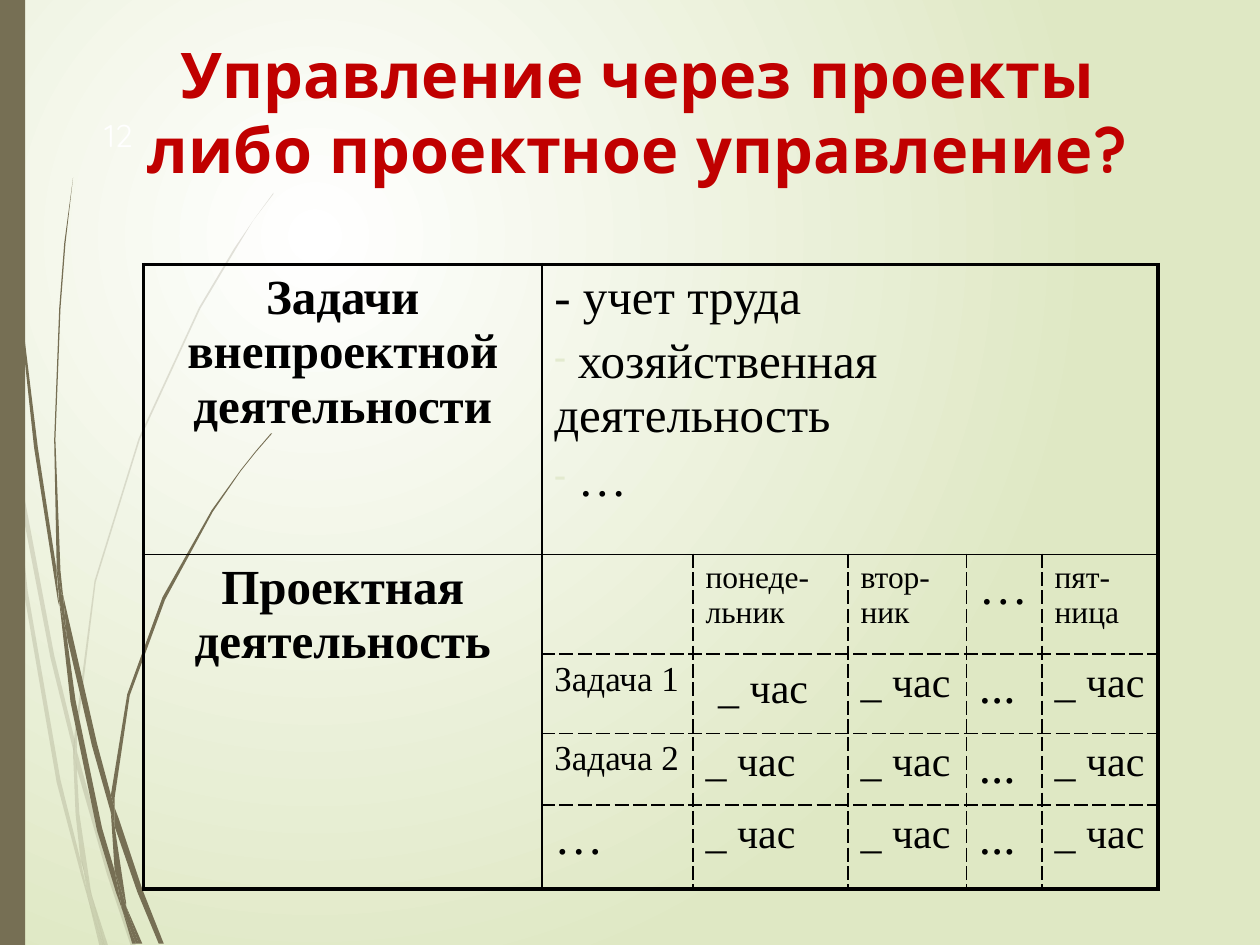
from lxml import etree
from pptx import Presentation
from pptx.dml.color import RGBColor
from pptx.enum.shapes import MSO_SHAPE
from pptx.enum.text import PP_ALIGN
from pptx.oxml import parse_xml
from pptx.oxml.ns import nsdecls, qn
from pptx.util import Inches, Pt

LEFT, CENTER = PP_ALIGN.LEFT, PP_ALIGN.CENTER
RECTANGLE = MSO_SHAPE.RECTANGLE
RED = RGBColor(0xC0, 0x00, 0x00)
BROWN = RGBColor(0x76, 0x6F, 0x54)
BLACK = RGBColor(0x00, 0x00, 0x00)
WHITE = RGBColor(0xFF, 0xFF, 0xFF)
PALE_GREEN = RGBColor(0xDF, 0xE8, 0xC4)
BULLET_GREEN = RGBColor(0xE3, 0xEA, 0xCF)
TITLE_FONT, TABLE_FONT = "Quicksand", "Times New Roman"

# Grass blades: outline points in inches
FAINT_BLADES = [
    [(.08, 3.5), (.06, 3.22), (0, 2.82), (0, 2.99), (.07, 3.44)],
    [(.4, 5.22), (.59, 5.99), (.59, 5.86), (.43, 5.2), (.1, 3.45), (.12, 3.76)],
    [(.64, 6.07), (.61, 5.96), (.61, 6.1), (.85, 6.94), (1.04, 7.51), (1.08, 7.51), (.88, 6.92)],
    [(.83, 7.51), (.86, 7.51), (.73, 7.11)],
    [(.64, 6.83), (.48, 6.19), (.22, 4.69), (.12, 3.76), (.08, 3.5), (.19, 4.7), (.45, 6.21),
     (.64, 6.93), (.7, 7.14), (.69, 7.07)],
    [(.58, 5.99), (.6, 6.46), (.64, 6.83), (.67, 6.92), (.73, 7.11), (.72, 7.06), (.63, 6.46),
     (.61, 6.1), (.61, 6.08)],
    [(.61, 5.84), (.76, 4.62), (1.11, 3.49), (1.59, 2.45), (1.87, 1.98), (2.01, 1.75),
     (2.17, 1.54), (2.17, 1.53), (2.01, 1.75), (1.86, 1.97), (1.58, 2.44), (1.1, 3.48),
     (.75, 4.61), (.59, 5.84), (.59, 5.86), (.61, 5.96)],
    [(.7, 7.14), (.79, 7.51), (.82, 7.51)],
    [(.61, 6.08), (.61, 6.1), (.61, 5.96), (.59, 5.86), (.58, 5.99)],
    [(.67, 6.92), (.65, 6.83), (.69, 7.07), (.7, 7.14), (.82, 7.51), (.83, 7.51), (.73, 7.11)],
]
SOLID_BLADES = [
    [(.05, 1.1), (.14, 2.33), (.27, 3.55), (.46, 4.77), (.47, 4.81), (.45, 4.57), (.45, 4.53),
     (.3, 3.55), (.15, 2.32), (.06, 1.09), (.04, .48), (.03, 0), (.02, 0), (.03, .48)],
    [(.73, 5.92), (.88, 6.45), (.88, 6.33), (.88, 6.31), (.77, 5.9), (.5, 4.72), (.53, 5.05)],
    [(.94, 6.49), (.91, 6.41), (.91, 6.56), (1.09, 7.08), (1.26, 7.49), (1.3, 7.49), (1.13, 7.06)],
    [(.91, 6.91), (.81, 6.57), (.6, 5.56), (.53, 5.05), (.47, 4.77), (.56, 5.57), (.77, 6.59),
     (.92, 7.08), (.97, 7.22), (.96, 7.17)],
    [(.5, 4.72), (.48, 4.53), (.44, 3.49), (.48, 2.45), (.52, 1.93), (.58, 1.41), (.51, 1.93),
     (.47, 2.45), (.43, 3.49), (.45, 4.49), (.49, 4.72)],
    [(1.1, 7.49), (1.13, 7.49), (1, 7.19)],
    [(.47, 4.77), (.53, 5.05), (.5, 4.72), (.49, 4.72), (.45, 4.49), (.45, 4.53)],
    [(.91, 6.33), (1.03, 5.52), (1.31, 4.76), (1.69, 4.06), (1.91, 3.74), (2.03, 3.59),
     (2.16, 3.44), (2.15, 3.44), (2.03, 3.58), (1.91, 3.73), (1.68, 4.05), (1.29, 4.74),
     (1.01, 5.51), (.88, 6.31), (.91, 6.41)],
    [(.97, 7.22), (1.05, 7.49), (1.08, 7.49)],
    [(.88, 6.45), (.91, 6.91), (.96, 7.06), (1, 7.19), (1, 7.16), (.91, 6.56), (.9, 6.51)],
    [(.88, 6.45), (.9, 6.51), (.91, 6.56), (.91, 6.41), (.88, 6.31), (.88, 6.33)],
    [(.96, 7.06), (.91, 6.91), (.96, 7.17), (.97, 7.22), (1.08, 7.49), (1.1, 7.49), (1, 7.19)],
]

# Table content
COL_WIDTHS = [3.16, 1.2, 1.23, 0.94, 0.6, 0.92]
ROW_HEIGHTS = [2.3, 0.79, 0.63, 0.53, 0.67]
DAYS = [("понеде-льник", 18), ("втор-ник", 18), ("…", 28), ("пят-ница", 18)]
TASKS = [("Задача 1", 20), ("Задача 2", 20), ("…", 28)]
HOURS = [("_ час", 24), ("_ час", 24), ("...", 28), ("_ час", 24)]


def paint(sp, color):
    sp.shadow.inherit = False
    sp.fill.solid()
    sp.fill.fore_color.rgb = color
    sp.line.fill.background()


def write(p, text, font=TABLE_FONT, size=28, color=BLACK, bold=False, align=LEFT):
    p.alignment = align
    for i, line in enumerate(text.split("\n")):
        if i:
            p.add_line_break()
        r = p.add_run()
        r.text = line
        r.font.name, r.font.size, r.font.bold = font, Pt(size), bold
        r.font.color.rgb = color


def add_text(s, left, top, width, height, text, **fmt):
    tf = s.shapes.add_textbox(Inches(left), Inches(top), Inches(width), Inches(height)).text_frame
    tf.word_wrap = True
    write(tf.paragraphs[0], text, **fmt)


def add_dash_bullet(p):
    pPr = p._p.get_or_add_pPr()
    pPr.set("marL", "0")
    pPr.set("indent", "0")
    color = etree.SubElement(pPr, qn("a:buClr"))
    etree.SubElement(color, qn("a:srgbClr"), val=str(BULLET_GREEN))
    etree.SubElement(pPr, qn("a:buSzPct"), val="70000")
    etree.SubElement(pPr, qn("a:buChar"), char="-")


def set_background(s):
    fill = s.background.fill
    fill.solid()
    bgPr = s.background._cSld.bg.bgPr
    bgPr.replace(bgPr[0], parse_xml(
        f'<a:gradFill {nsdecls("a")} rotWithShape="1"><a:gsLst>'
        f'<a:gs pos="0"><a:srgbClr val="{WHITE}"/></a:gs>'
        f'<a:gs pos="100000"><a:srgbClr val="{PALE_GREEN}"/></a:gs></a:gsLst>'
        '<a:path path="circle"><a:fillToRect l="50000" t="50000" r="100000" b="100000"/>'
        '</a:path></a:gradFill>'))


def add_blade(s, points, alpha=None):
    start, *rest = [(Inches(x), Inches(y)) for x, y in points]
    builder = s.shapes.build_freeform(*start)
    builder.add_line_segments(rest, close=True)
    sp = builder.convert_to_shape()
    paint(sp, BROWN)
    if alpha:
        color = sp._element.spPr.find(qn("a:solidFill"))[0]
        etree.SubElement(color, qn("a:alpha"), val=str(alpha * 1000))


def edge_style(position, last):
    """Thick frame, thin line after the first row or column, dashes elsewhere."""
    if position in (0, last):
        return 2.25, "solid"
    return 1, "solid" if position == 1 else "sysDash"


def set_borders(cell, row, col):
    columns, rows = len(COL_WIDTHS), len(ROW_HEIGHTS)
    edges = {"a:lnL": edge_style(col, columns),
             "a:lnR": edge_style(col + cell.span_width, columns),
             "a:lnT": edge_style(row, rows),
             "a:lnB": edge_style(row + cell.span_height, rows)}
    tcPr = cell._tc.get_or_add_tcPr()
    for tag, (width, dash) in edges.items():
        ln = etree.SubElement(tcPr, qn(tag), w=str(Pt(width)))
        etree.SubElement(etree.SubElement(ln, qn("a:solidFill")), qn("a:srgbClr"), val=str(BLACK))
        etree.SubElement(ln, qn("a:prstDash"), val=dash)


def add_plan_table(s):
    table = s.shapes.add_table(len(ROW_HEIGHTS), len(COL_WIDTHS), Inches(1.14), Inches(2.1),
                               Inches(sum(COL_WIDTHS)), Inches(sum(ROW_HEIGHTS))).table
    table.first_row = table.horz_banding = False
    for column, width in zip(table.columns, COL_WIDTHS):
        column.width = Inches(width)
    for row, height in zip(table.rows, ROW_HEIGHTS):
        row.height = Inches(height)
    table.cell(0, 1).merge(table.cell(0, 5))
    table.cell(1, 0).merge(table.cell(4, 0))

    for r in range(len(ROW_HEIGHTS)):
        for c in range(len(COL_WIDTHS)):
            cell = table.cell(r, c)
            if not cell.is_spanned:
                set_borders(cell, r, c)
            cell.fill.background()

    # Row headings and the list of non-project work
    for r, heading in enumerate(["Задачи внепроектной деятельности", "Проектная деятельность"]):
        write(table.cell(r, 0).text_frame.paragraphs[0], heading, bold=True, align=CENTER)
    tf = table.cell(0, 1).text_frame
    write(tf.paragraphs[0], "- учет труда")
    for item in (" хозяйственная деятельность", " …"):
        p = tf.add_paragraph()
        p.space_before = Pt(5.6)
        add_dash_bullet(p)
        write(p, item)

    # Weekly grid: days across, tasks down
    grid = [[None] + DAYS] + [[task] + HOURS for task in TASKS]
    for r, line in enumerate(grid, 1):
        for c, entry in enumerate(line, 1):
            if entry:
                write(table.cell(r, c).text_frame.paragraphs[0], entry[0], size=entry[1])
    first_hours = table.cell(2, 2)
    first_hours.margin_left, first_hours.margin_top = Inches(0.2), Inches(0.1)


def main():
    prs = Presentation()
    prs.slide_width, prs.slide_height = Inches(10), Inches(7.5)
    s = prs.slides.add_slide(prs.slide_layouts[6])

    # Backdrop
    set_background(s)
    for points in FAINT_BLADES:
        add_blade(s, points, alpha=20)
    for points in SOLID_BLADES:
        add_blade(s, points)
    paint(s.shapes.add_shape(RECTANGLE, 0, 0, Inches(0.2), Inches(7.5)), BROWN)

    # Slide number, title and table
    add_text(s, 0.73, 0.87, 0.6, 0.4, "12", font=TITLE_FONT, size=18, color=WHITE)
    add_text(s, 0.56, 0.23, 9, 0.63, "Управление через проекты\nлибо проектное управление?",
             font=TITLE_FONT, size=36, color=RED, bold=True, align=CENTER)
    add_plan_table(s)
    prs.save("out.pptx")


if __name__ == "__main__":
    main()
